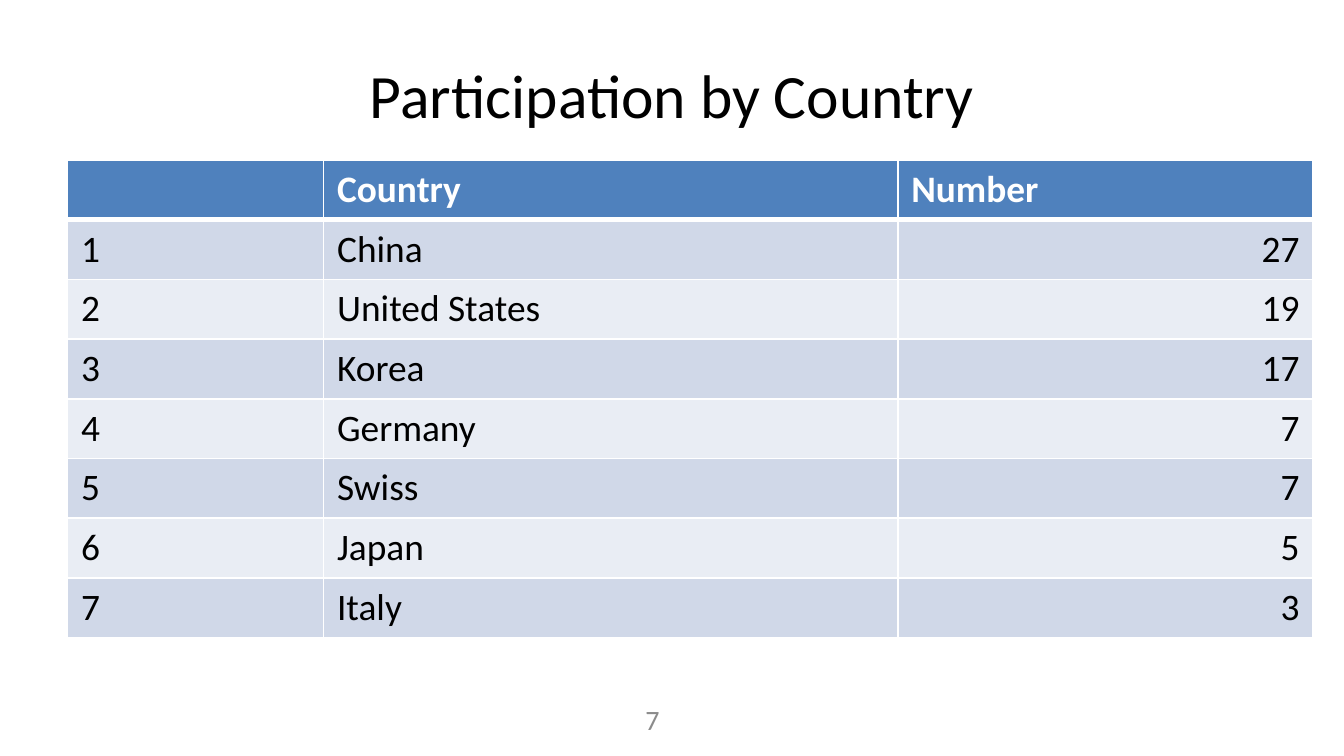
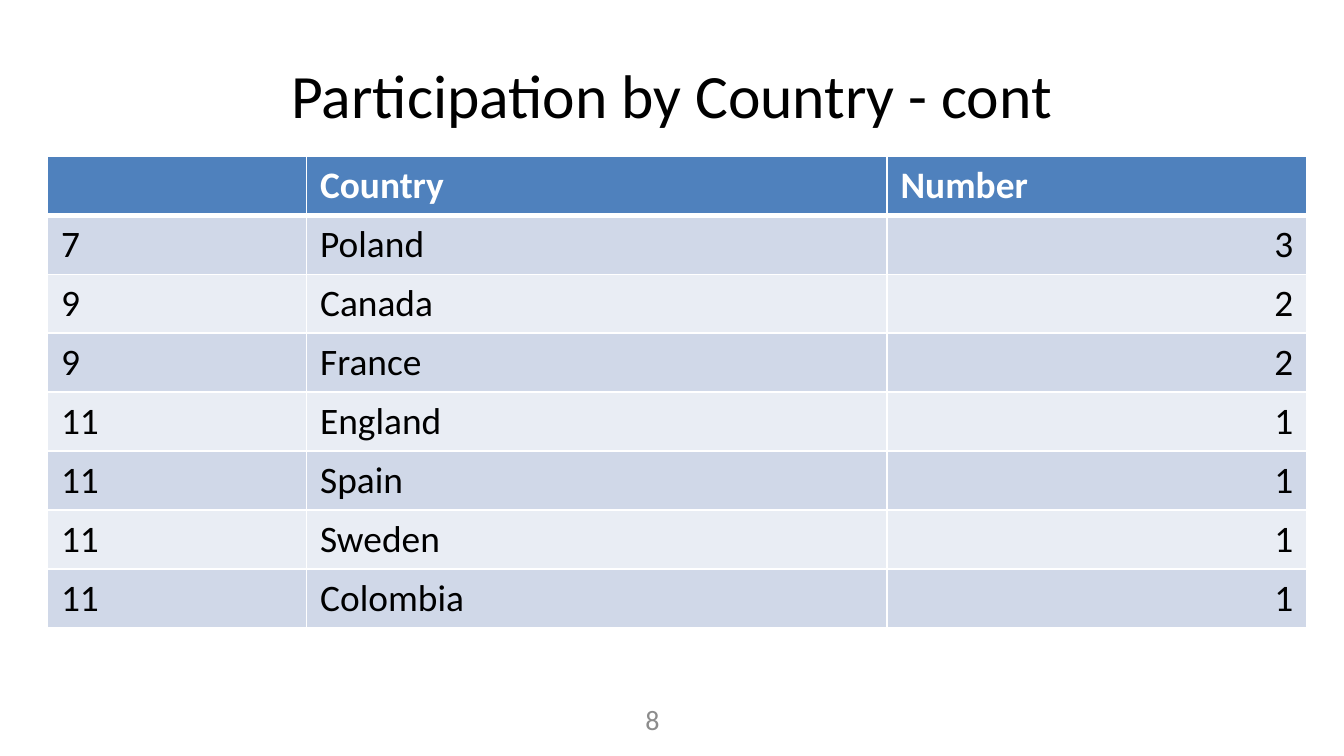
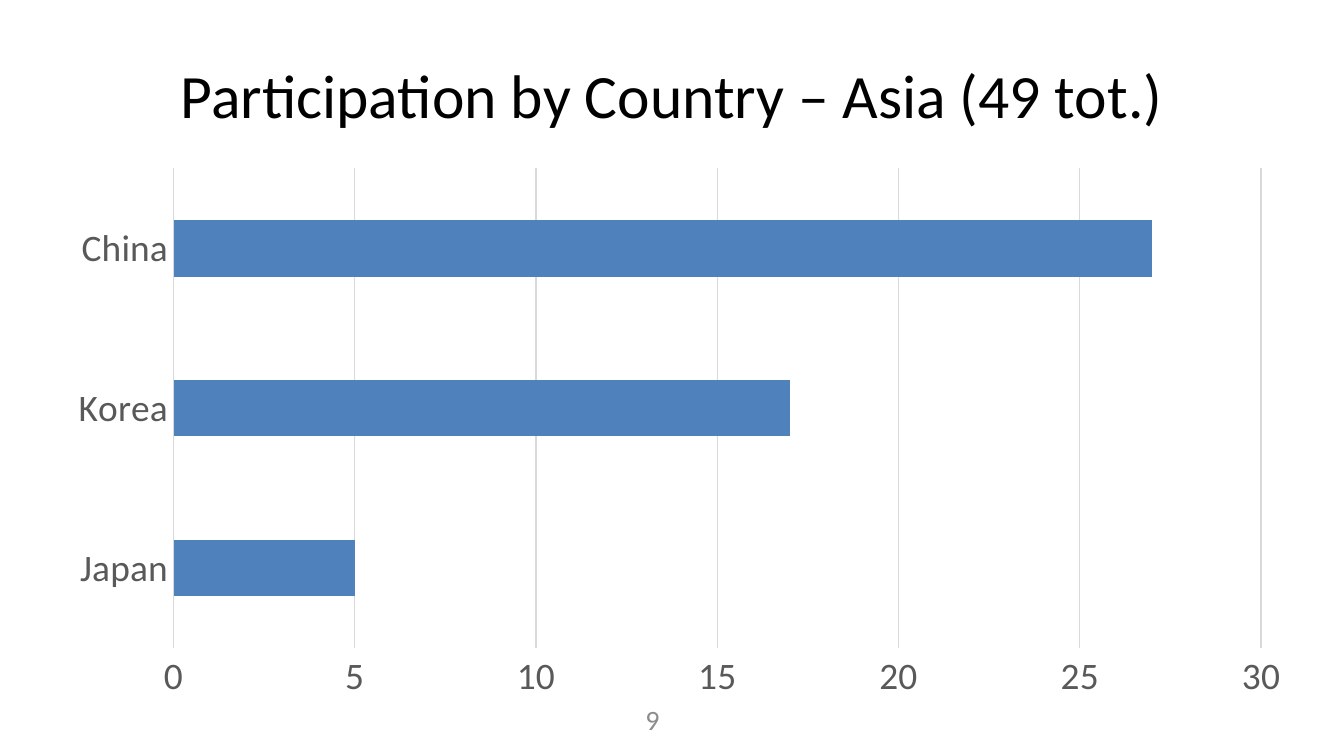
from dataclasses import dataclass

from lxml import etree
from pptx import Presentation
from pptx.chart.data import CategoryChartData
from pptx.dml.color import RGBColor
from pptx.enum.chart import XL_CHART_TYPE, XL_TICK_MARK
from pptx.enum.text import MSO_ANCHOR, PP_ALIGN
from pptx.oxml import parse_xml
from pptx.oxml.ns import nsdecls, qn
from pptx.util import Pt

BAR = XL_CHART_TYPE.BAR_CLUSTERED
NO_TICK = XL_TICK_MARK.NONE
MIDDLE = MSO_ANCHOR.MIDDLE
LEFT, CENTER, RIGHT = PP_ALIGN.LEFT, PP_ALIGN.CENTER, PP_ALIGN.RIGHT


@dataclass(frozen=True)
class Theme:
    font: str = "Calibri"
    title_size: int = 33
    body_size: int = 20
    number_size: int = 15
    ink: str = "000000"
    white: str = "FFFFFF"
    accent: str = "4F81BD"
    bands: tuple = ("D0D8E8", "E9EDF4")
    number: str = "8C8C8C"
    axis_text: str = "595959"
    grid: str = "D9D9D9"


THEME = Theme()

# Boxes are left, top, width, height in points.
SLIDE_SIZE = (720, 405)
TITLE_BOX = (36, 16.5, 648, 67.5)
NUMBER_BOX = (265.5, 374.5, 168, 21.6)
FIRST_NUMBER = 7

HEADER = ("", "Country", "Number")
COLUMN_ALIGN = (LEFT, LEFT, RIGHT)

SLIDES = [
    {
        "title": "Participation by Country",
        "table": {
            "origin": (36.2, 85.8),
            "columns": (137.2, 307.6, 222.4),
            "row_height": 32,
            "rows": [
                (1, "China", 27),
                (2, "United States", 19),
                (3, "Korea", 17),
                (4, "Germany", 7),
                (5, "Swiss", 7),
                (6, "Japan", 5),
                (7, "Italy", 3),
            ],
        },
    },
    {
        "title": "Participation by Country - cont",
        "table": {
            "origin": (25.5, 83.8),
            "columns": (138.8, 311, 224.8),
            "row_height": 31.6,
            "rows": [
                (7, "Poland", 3),
                (9, "Canada", 2),
                (9, "France", 2),
                (11, "England", 1),
                (11, "Spain", 1),
                (11, "Sweden", 1),
                (11, "Colombia", 1),
            ],
        },
    },
    {
        "title": "Participation by Country – Asia (49 tot.)",
        "chart": {
            "box": (25.2, 77.8, 677.5, 309.6),
            "plot": {"x": 0.1, "y": 0.04, "w": 0.86, "h": 0.83},
            "series": "Series 1",
            "values": {"Japan": 5, "Korea": 17, "China": 27},
            "axis_max": 30,
            "axis_step": 5,
            "gap": 182,
        },
    },
]


def rgb(color):
    return RGBColor.from_string(color)


def set_font(font, size, color, bold=False):
    font.name, font.size, font.bold = THEME.font, Pt(size), bold
    font.color.rgb = rgb(color)


def add_text(s, box, text, size, color):
    tf = s.shapes.add_textbox(*map(Pt, box)).text_frame
    tf.word_wrap = True
    tf.vertical_anchor = MIDDLE
    p = tf.paragraphs[0]
    p.text, p.alignment = text, CENTER
    set_font(p.font, size, color)


def set_borders(cell, top, bottom):
    """Draw white cell borders; top and bottom are widths in points."""
    for side, width in (("L", 1), ("R", 1), ("T", top), ("B", bottom)):
        cell._tc.get_or_add_tcPr().append(parse_xml(
            f'<a:ln{side} {nsdecls("a")} w="{Pt(width)}"><a:solidFill>'
            f'<a:srgbClr val="{THEME.white}"/></a:solidFill></a:ln{side}>'))


def add_country_table(s, origin, columns, row_height, rows):
    rows = [HEADER, *rows]
    size = (sum(columns), row_height * len(rows))
    table = s.shapes.add_table(len(rows), len(columns), *map(Pt, origin + size)).table
    for column, width in zip(table.columns, columns):
        column.width = Pt(width)
    for i, values in enumerate(rows):
        table.rows[i].height = Pt(row_height)
        header = i == 0
        fill = THEME.accent if header else THEME.bands[(i - 1) % 2]
        for j, value in enumerate(values):
            cell = table.cell(i, j)
            set_borders(cell, top=3 if i == 1 else 1, bottom=3 if header else 1)
            cell.fill.solid()
            cell.fill.fore_color.rgb = rgb(fill)
            p = cell.text_frame.paragraphs[0]
            p.text = str(value)
            p.alignment = LEFT if header else COLUMN_ALIGN[j]
            set_font(p.font, THEME.body_size, THEME.white if header else THEME.ink, header)


def set_plot_layout(chart, plot):
    """Fix the inner plot area, given as fractions of the chart."""
    area = chart._chartSpace.chart.plotArea
    for old in area.findall(qn("c:layout")):
        area.remove(old)
    layout = etree.Element(qn("c:layout"))
    manual = etree.SubElement(layout, qn("c:manualLayout"))
    settings = {"layoutTarget": "inner", "xMode": "edge", "yMode": "edge", **plot}
    for tag, value in settings.items():
        etree.SubElement(manual, qn(f"c:{tag}")).set("val", str(value))
    area.insert(0, layout)


def add_country_chart(s, box, plot, series, values, axis_max, axis_step, gap):
    data = CategoryChartData()
    data.categories = list(values)
    data.add_series(series, list(values.values()))
    chart = s.shapes.add_chart(BAR, *map(Pt, box), data).chart
    chart.has_title = chart.has_legend = False
    set_font(chart.font, THEME.body_size, THEME.ink)
    set_plot_layout(chart, plot)

    bars = chart.plots[0]
    bars.vary_by_categories = False
    bars.gap_width = gap
    fill = bars.series[0].format.fill
    fill.solid()
    fill.fore_color.rgb = rgb(THEME.accent)

    countries, numbers = chart.category_axis, chart.value_axis
    for axis in (countries, numbers):
        axis.major_tick_mark = axis.minor_tick_mark = NO_TICK
        set_font(axis.tick_labels.font, THEME.body_size, THEME.axis_text)
    numbers.minimum_scale, numbers.maximum_scale = 0, axis_max
    numbers.major_unit = axis_step
    numbers.has_major_gridlines = True
    numbers.format.line.fill.background()
    for line in (countries.format.line, numbers.major_gridlines.format.line):
        line.color.rgb, line.width = rgb(THEME.grid), Pt(0.75)


def main():
    prs = Presentation()
    prs.slide_width, prs.slide_height = map(Pt, SLIDE_SIZE)
    for number, content in enumerate(SLIDES, FIRST_NUMBER):
        s = prs.slides.add_slide(prs.slide_layouts[6])
        add_text(s, TITLE_BOX, content["title"], THEME.title_size, THEME.ink)
        add_text(s, NUMBER_BOX, str(number), THEME.number_size, THEME.number)
        if "table" in content:
            add_country_table(s, **content["table"])
        if "chart" in content:
            add_country_chart(s, **content["chart"])
    prs.save("out.pptx")


if __name__ == "__main__":
    main()
